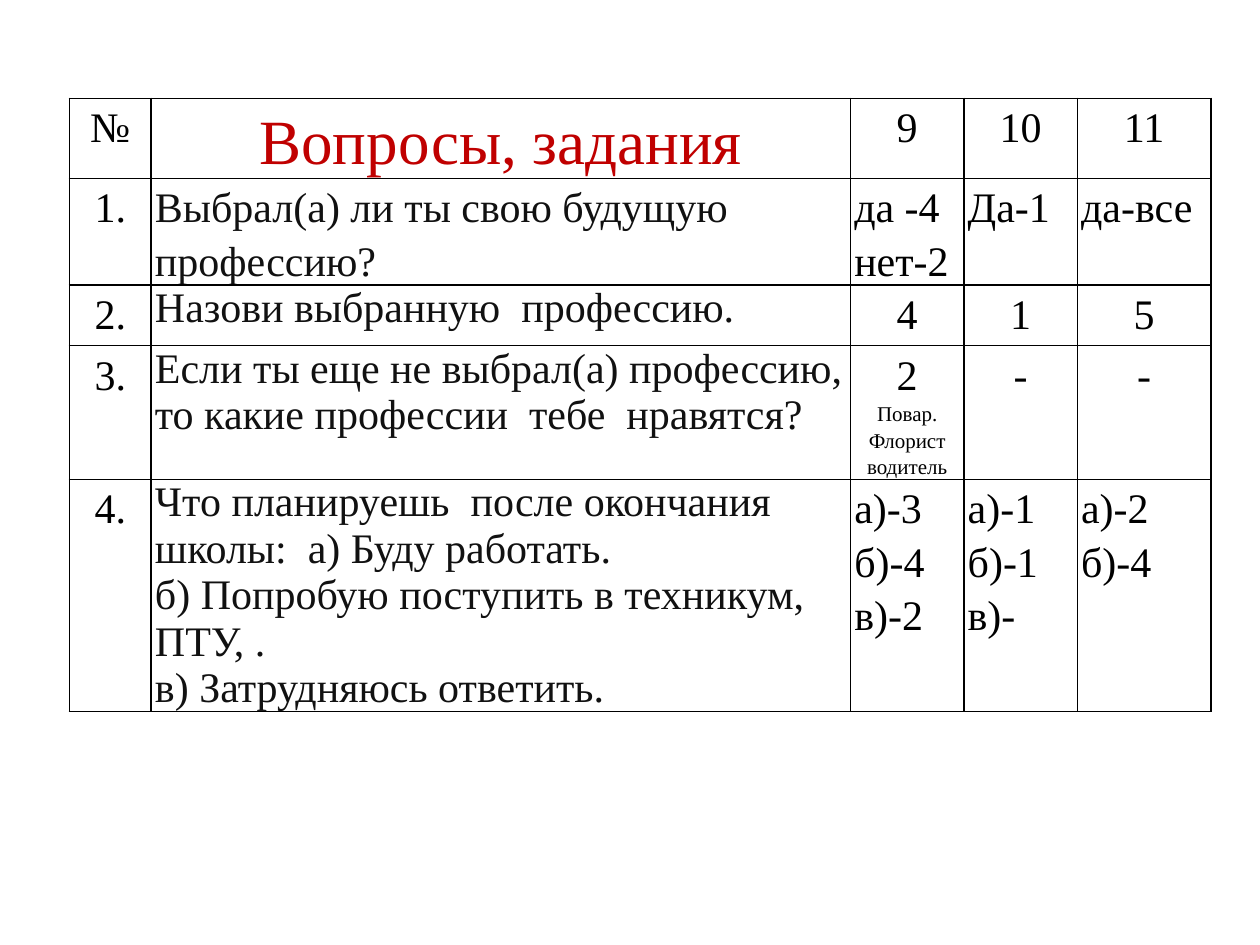
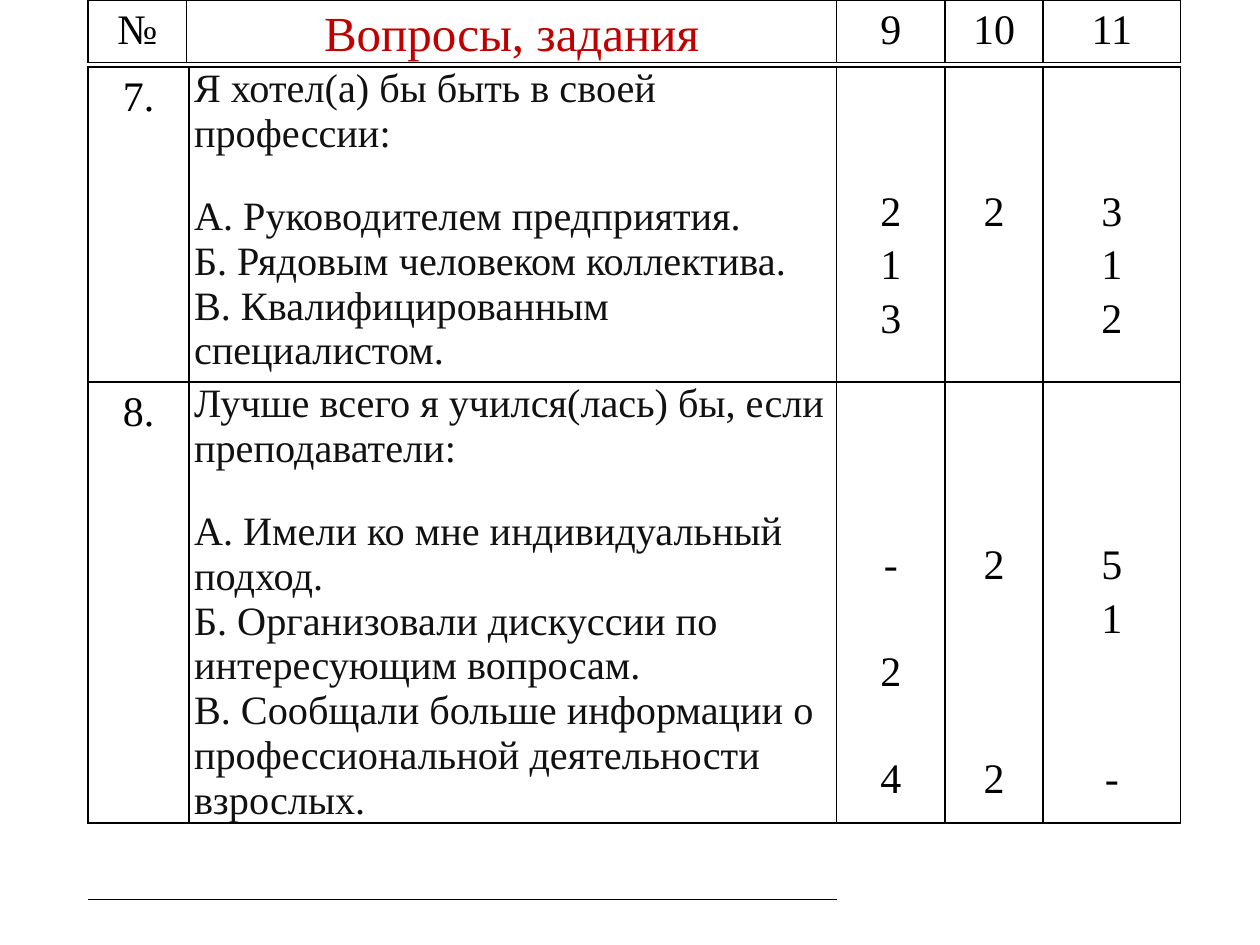
from dataclasses import dataclass

from lxml.etree import SubElement
from pptx import Presentation
from pptx.dml.color import RGBColor
from pptx.enum.text import PP_ALIGN
from pptx.oxml.ns import qn
from pptx.util import Inches, Pt


@dataclass(frozen=True)
class Theme:
    """Colours, type sizes and spacings shared by the survey tables."""
    font: str = "Times New Roman"
    ink: str = "000000"
    question: str = "111111"
    heading: str = "C00000"
    body: float = 24
    compact: float = 23
    note: float = 12
    loose: float = 1.15
    skipped_line: float = 30.5
    border: float = 1
    plain_table: str = "{2D5ABB26-0587-4C30-8999-92F81FD0307C}"


THEME = Theme()
SLIDE_WIDTH, SLIDE_HEIGHT = Inches(10), Inches(7.5)
EVERY_SIDE = ("L", "R", "T", "B")


@dataclass
class Entry:
    """Content of one table cell: formatted lines and the drop above them."""
    lines: list
    drop: float = 0


def across(percent):
    """Turn a percentage of the slide width into a length."""
    return round(SLIDE_WIDTH * percent / 100)


def down(percent):
    """Turn a percentage of the slide height into a length."""
    return round(SLIDE_HEIGHT * percent / 100)


def answers(*texts, drop=0, **look):
    """Stack centred answers; None leaves the height of one answer free."""
    lines, skipped = [], 0
    for text in texts:
        if text is None:
            skipped += 1
            continue
        lines.append((text, dict(look, before=skipped * THEME.skipped_line)))
        skipped = 0
    return Entry(lines, drop)


def choices(*texts):
    """Stack left-aligned answers."""
    return answers(*texts, align=PP_ALIGN.LEFT)


def question(*texts, size=THEME.body, spacing=1, before=10, after=12):
    """Make the wording of a question, one paragraph for each text."""
    look = dict(size=size, colour=THEME.question, align=PP_ALIGN.LEFT,
                spacing=spacing, before=before, after=after)
    return Entry([(text, look) for text in texts])


def header(title_size):
    """Make the header row with the grades."""
    title = answers("Вопросы, задания", size=title_size, colour=THEME.heading)
    return [answers("№"), title, *map(answers, ("9", "10", "11"))]


def write(paragraph, text, size=THEME.body, colour=THEME.ink,
          align=PP_ALIGN.CENTER, spacing=THEME.loose, before=0, after=0):
    """Write a formatted paragraph."""
    paragraph.text = text
    paragraph.alignment = align
    paragraph.line_spacing = spacing
    paragraph.space_before, paragraph.space_after = Pt(before), Pt(after)
    for run in paragraph.runs:
        run.font.name, run.font.size = THEME.font, Pt(size)
        run.font.color.rgb = RGBColor.from_string(colour)


def draw_borders(cell, sides=EVERY_SIDE):
    """Draw solid borders on the given sides of a cell."""
    properties = cell._tc.get_or_add_tcPr()
    for position, side in enumerate(sides):
        edge = properties.makeelement(
            qn(f"a:ln{side}"), {"w": str(Pt(THEME.border))})
        properties.insert(position, edge)
        solid = SubElement(edge, qn("a:solidFill"))
        SubElement(solid, qn("a:srgbClr"), val=THEME.ink)


def fill_cell(cell, entry, margin):
    """Put an entry into a bordered cell."""
    cell.margin_left = cell.margin_right = Inches(margin)
    cell.margin_top, cell.margin_bottom = Inches(entry.drop), 0
    frame = cell.text_frame
    for index, (text, look) in enumerate(entry.lines):
        paragraph = frame.add_paragraph() if index else frame.paragraphs[0]
        write(paragraph, text, **look)
    draw_borders(cell)


def add_survey(slide, left, top, columns, heights, rows, margin=0.03):
    """Add a survey table placed by percentages of the slide."""
    survey = slide.shapes.add_table(
        len(heights), len(columns), across(left), down(top),
        across(sum(columns)), down(sum(heights))).table
    survey.first_row = survey.horz_banding = False
    survey._tbl.tblPr.find(qn("a:tableStyleId")).text = THEME.plain_table
    for column, share in zip(survey.columns, columns):
        column.width = across(share)
    for row, share in zip(survey.rows, heights):
        row.height = down(share)
    for cell in survey.iter_cells():
        cell.fill.background()
    for row, entries in zip(survey.rows, rows):
        for cell, entry in zip(row.cells, entries):
            fill_cell(cell, entry, margin)
    return survey


def add_choice_slide(slide):
    """Build the questions about the choice of profession."""
    cook = answers("2")
    cook.lines += answers("Повар. Флорист", "водитель", size=THEME.note).lines
    rows = [
        header(36),
        [answers("1."),
         question("Выбрал(а) ли ты свою будущую профессию?",
                  spacing=THEME.loose, before=0, after=0),
         choices("да -4", "нет-2"), choices("Да-1"), choices("да-все")],
        [answers("2."),
         question("Назови выбранную  профессию.", before=0, after=0),
         answers("4"), answers("1"), answers("5")],
        [answers("3."),
         question("Если ты еще не выбрал(а) профессию, то какие профессии"
                  "  тебе  нравятся?"),
         cook, answers("-"), answers("-")],
        [answers("4."),
         question("Что планируешь  после окончания школы:  а) Буду работать.\n"
                  "б) Попробую поступить в техникум, ПТУ, .\n"
                  "в) Затрудняюсь ответить."),
         choices("а)-3", "б)-4", "в)-2"), choices("а)-1", "б)-1", "в)-"),
         choices("а)-2", "б)-4")],
    ]
    add_survey(slide, 5.5, 10.4, (6.5, 55.5, 9, 9, 10.6),
               (6.4, 10.2, 6.4, 12.4, 18.2), rows)


def add_career_slide(slide):
    """Build the questions about the role at work and the teachers."""
    role_drop, teacher_drop = (0.305 * lines for lines in (3, 4))
    grades = (8.6, 7.8, 10.9)
    rows = [
        [answers("7."),
         question("Я хотел(а) бы быть в своей профессии:",
                  "А. Руководителем предприятия.\n"
                  "Б. Рядовым человеком коллектива.\n"
                  "В. Квалифицированным специалистом.", size=THEME.compact),
         answers("2", "1", "3", drop=role_drop),
         answers("2", drop=role_drop),
         answers("3", "1", "2", drop=role_drop)],
        [answers("8."),
         question("Лучше всего я учился(лась) бы, если преподаватели:",
                  "А. Имели ко мне индивидуальный подход.\n"
                  "Б. Организовали дискуссии по интересующим вопросам.\n"
                  "В. Сообщали больше информации о профессиональной "
                  "деятельности взрослых.", size=THEME.compact),
         answers("-", None, "2", None, "4", drop=teacher_drop),
         answers("2", None, None, None, "2", drop=teacher_drop),
         answers("5", "1", None, None, "-", drop=teacher_drop)],
    ]
    survey = add_survey(slide, 7, 7.07, (8, 51.4, *grades),
                        (33.33, 45.2, 8.1), rows, margin=0.04)
    closing, remainder = survey.cell(2, 0), survey.cell(2, 2)
    closing.merge(survey.cell(2, 1))
    remainder.merge(survey.cell(2, 4))
    for column in range(2):
        draw_borders(survey.cell(2, column), ("T", "B"))
    draw_borders(remainder, ("T",))
    add_survey(slide, 7, 0, (7.8, 51.6, *grades), (6.4,), [header(28)])


def main():
    """Build and save the survey slides."""
    deck = Presentation()
    deck.slide_width, deck.slide_height = SLIDE_WIDTH, SLIDE_HEIGHT
    for build in (add_choice_slide, add_career_slide):
        build(deck.slides.add_slide(deck.slide_layouts[6]))
    deck.save("out.pptx")


if __name__ == "__main__":
    main()
